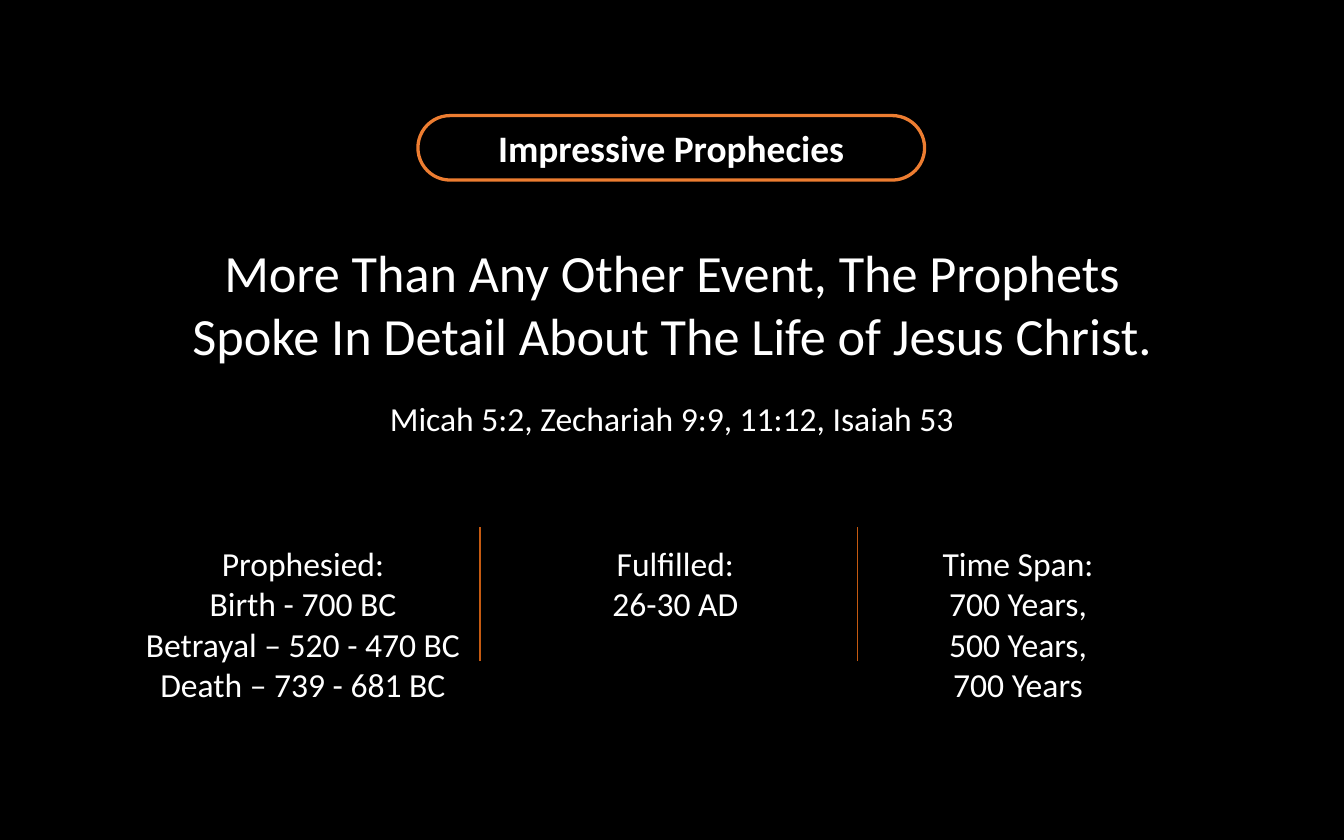
from lxml.etree import SubElement
from pptx import Presentation
from pptx.dml.color import RGBColor
from pptx.enum.shapes import MSO_CONNECTOR, MSO_SHAPE
from pptx.enum.text import MSO_ANCHOR, PP_ALIGN
from pptx.oxml.ns import qn
from pptx.util import Inches, Pt

BLACK = RGBColor(0x00, 0x00, 0x00)
WHITE = RGBColor(0xFF, 0xFF, 0xFF)
ORANGE = RGBColor(0xED, 0x7D, 0x31)
RUST = RGBColor(0xC5, 0x5A, 0x11)

BODY = {"name": "Calibri", "size": Pt(18), "bold": False}
HEADLINE = {**BODY, "size": Pt(28)}
TITLE = {**BODY, "size": Pt(20), "bold": True}

# Left, width, heading and details of each column
COLUMNS = [
    (0.93, 2.65, "Prophesied:", "Birth - 700 BC\nBetrayal – 520 - 470 BC\nDeath – 739 - 681 BC"),
    (3.87, 2.31, "Fulfilled:", "26-30 AD"),
    (6.42, 2.31, "Time Span:", "700 Years,\n500 Years,\n700 Years"),
]
DIVIDERS = [3.57, 6.38]


def write_text(frame, paragraphs, font_format):
    """Fill a frame with centred white paragraphs; a newline is a line break."""
    frame.word_wrap = True
    for index, text in enumerate(paragraphs):
        para = frame.add_paragraph() if index else frame.paragraphs[0]
        para.text = text
        para.alignment = PP_ALIGN.CENTER
        for span in para.runs:
            span.font.color.rgb = WHITE
            for name, value in font_format.items():
                setattr(span.font, name, value)


def add_text(page, box, paragraphs, font_format):
    frame = page.shapes.add_textbox(*map(Inches, box)).text_frame
    write_text(frame, paragraphs, font_format)


def add_title_pill(page, box):
    pill = page.shapes.add_shape(MSO_SHAPE.ROUNDED_RECTANGLE, *map(Inches, box))
    pill.adjustments[0] = 0.5
    pill.shadow.inherit = False
    pill.fill.background()
    pill.line.color.rgb = ORANGE
    pill.line.width = Pt(1.75)
    pill.text_frame.vertical_anchor = MSO_ANCHOR.MIDDLE
    write_text(pill.text_frame, ["Impressive Prophecies"], TITLE)


def add_message(page, box):
    """Headline, with the references centred below it."""
    left, top, width, height = box
    add_text(page, (left, top, width, 1.04),
             ["More Than Any Other Event, The Prophets\n"
              "Spoke In Detail About The Life of Jesus Christ."], HEADLINE)
    inset = 2.0
    add_text(page, (left + inset, top + height - 0.4, width - 2 * inset, 0.4),
             ["Micah 5:2, Zechariah 9:9, 11:12, Isaiah 53"], BODY)


def add_divider(page, x, top, height):
    ends = map(Inches, (x, top + height, x, top))
    divider = page.shapes.add_connector(MSO_CONNECTOR.STRAIGHT, *ends)
    divider.line.color.rgb = RUST
    divider.line.width = Pt(1)
    SubElement(divider._element.spPr, qn("a:effectLst"))


def add_timeline(page, top, height):
    """Three text columns with dividers between them."""
    for left, width, heading, details in COLUMNS:
        rows = 2 + details.count("\n")
        box = (left, top + 0.07, width, 0.1 + 0.3 * rows)
        add_text(page, box, [heading, details], BODY)
    for x in DIVIDERS:
        add_divider(page, x, top, height)


def main():
    deck = Presentation()
    deck.slide_width, deck.slide_height = Inches(10), Inches(6.25)
    page = deck.slides.add_slide(deck.slide_layouts[6])
    page.background.fill.solid()
    page.background.fill.fore_color.rgb = BLACK

    add_title_pill(page, (3.11, 0.86, 3.77, 0.48))
    add_message(page, (0.66, 1.74, 8.68, 1.57))
    add_timeline(page, top=3.92, height=1.0)
    deck.save("out.pptx")


if __name__ == "__main__":
    main()
